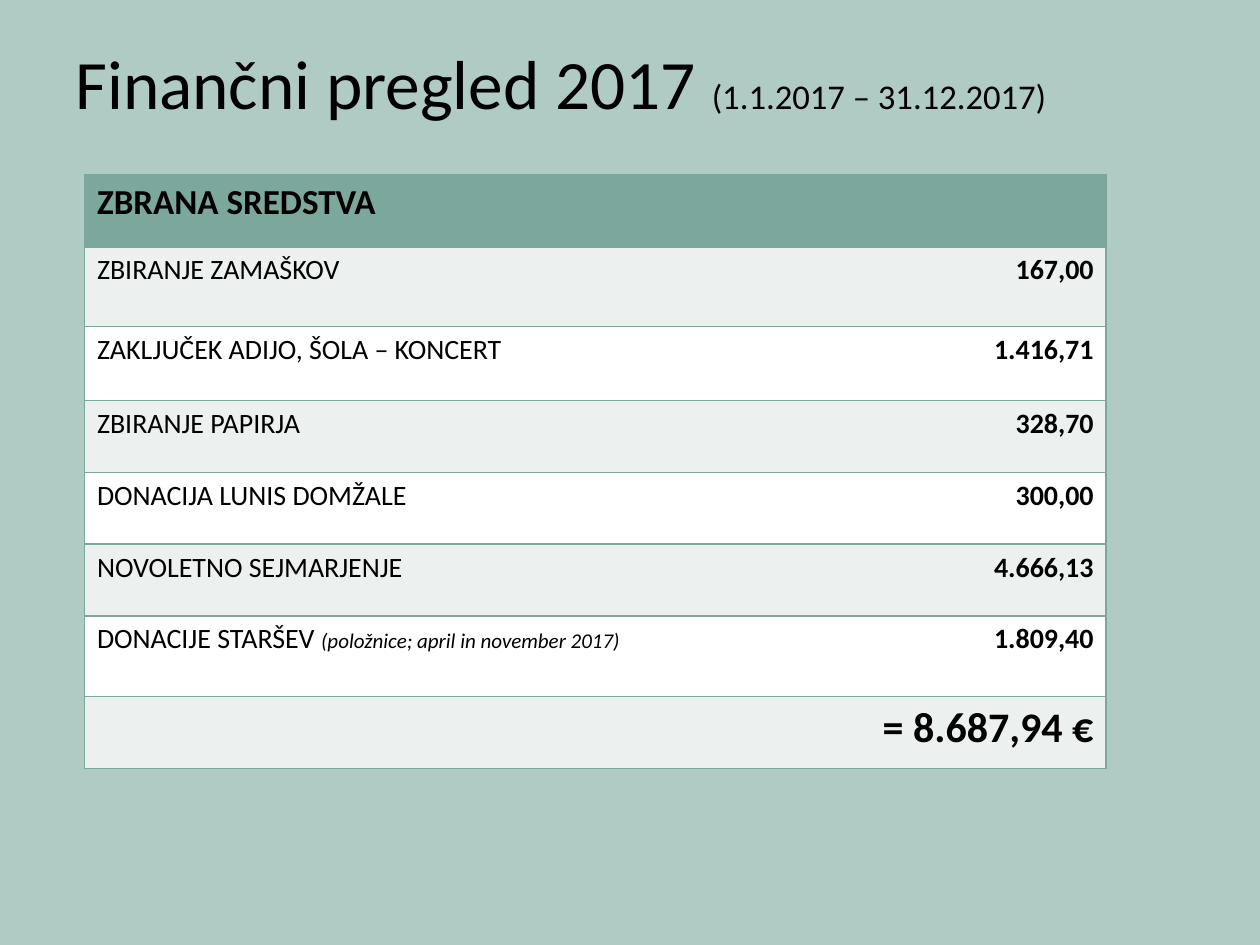
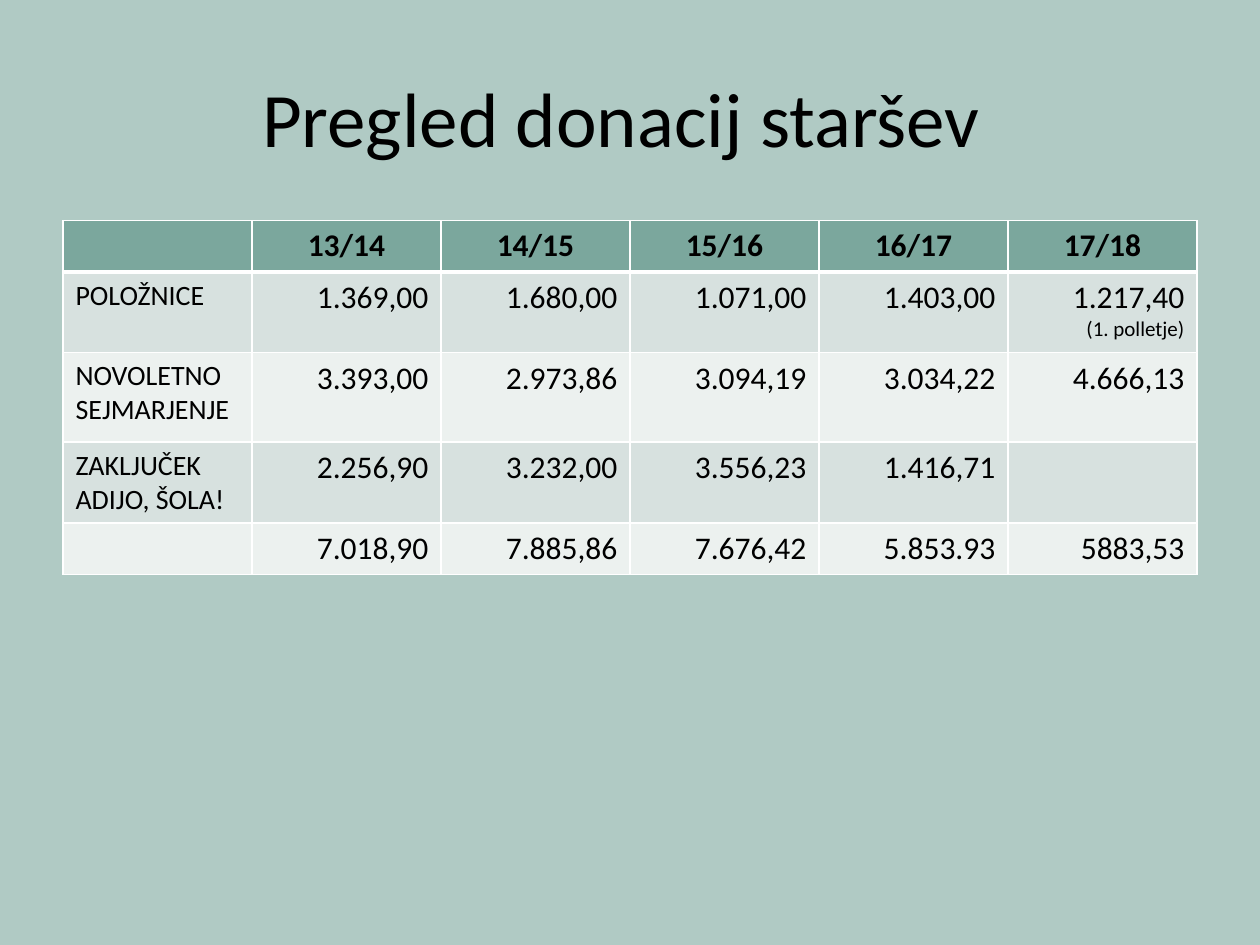
from dataclasses import dataclass

from lxml.etree import SubElement
from pptx import Presentation
from pptx.dml.color import RGBColor
from pptx.enum.text import MSO_ANCHOR, PP_ALIGN
from pptx.oxml.ns import qn
from pptx.util import Inches, Pt

BACKGROUND = RGBColor(0xB0, 0xCA, 0xC4)
HEADER = RGBColor(0x7B, 0xA7, 0x9D)
BAND_DARK = RGBColor(0xD7, 0xE1, 0xDF)
BAND_LIGHT = RGBColor(0xEC, 0xF1, 0xEF)
WHITE = RGBColor(0xFF, 0xFF, 0xFF)
BLACK = RGBColor(0, 0, 0)
FONT = "Calibri"


@dataclass
class Span:
    text: str
    size: float
    bold: bool = False
    italic: bool = False


class Slides:
    """Holds the deck, its shared style and the current page."""

    def __init__(self):
        self.deck = Presentation()
        self.deck.slide_width = Inches(10)
        self.deck.slide_height = Inches(7.5)
        self.page = None

    def new_page(self):
        self.page = self.deck.slides.add_slide(self.deck.slide_layouts[6])
        fill = self.page.background.fill
        fill.solid()
        fill.fore_color.rgb = BACKGROUND

    def fill_text(self, text_frame, lines, align):
        """Set lines, each a list of spans, one paragraph per line."""
        for index, spans in enumerate(lines):
            para = text_frame.paragraphs[0] if index == 0 else text_frame.add_paragraph()
            para.alignment = align
            for span in spans:
                run = para.add_run()
                run.text = span.text
                font = run.font
                font.name, font.size = FONT, Pt(span.size)
                font.bold, font.italic = span.bold, span.italic
                font.color.rgb = BLACK

    def title(self, spans, height, align=PP_ALIGN.LEFT):
        box = self.page.shapes.add_textbox(Inches(0.5), Inches(0.3), Inches(9), Inches(height))
        frame = box.text_frame
        frame.word_wrap = True
        frame.vertical_anchor = MSO_ANCHOR.MIDDLE
        self.fill_text(frame, [spans], align)

    def table(self, left, top, widths, heights):
        """Add an unstyled table; its cells are set one by one with cell()."""
        frame = self.page.shapes.add_table(
            len(heights), len(widths), Inches(left), Inches(top),
            Inches(sum(widths)), Inches(sum(heights)))
        table = frame.table
        table.first_row = table.horz_banding = False
        for column, width in zip(table.columns, widths):
            column.width = Inches(width)
        for row, height in zip(table.rows, heights):
            row.height = Inches(height)
        return table

    def cell(self, cell, lines, align, fill, border, edges):
        """Edges maps L, R, T and B to a border width in points; 0 hides the edge."""
        properties = cell._tc.get_or_add_tcPr()
        for side in "LRTB":
            line = SubElement(properties, qn(f"a:ln{side}"), w=str(Pt(edges[side])))
            if edges[side]:
                paint = SubElement(line, qn("a:solidFill"))
                SubElement(paint, qn("a:srgbClr"), val=str(border))
            else:
                SubElement(line, qn("a:noFill"))
        cell.fill.solid()
        cell.fill.fore_color.rgb = fill
        self.fill_text(cell.text_frame, lines, align)


def build_income(slides):
    slides.new_page()
    slides.title([Span("Finančni pregled 2017 ", 39.6),
                  Span("(1.1.2017 – 31.12.2017)", 19.8)], 0.69)
    incomes = [
        ("ZBIRANJE ZAMAŠKOV", "167,00"),
        ("ZAKLJUČEK ADIJO, ŠOLA – KONCERT", "1.416,71"),
        ("ZBIRANJE PAPIRJA", "328,70"),
        ("DONACIJA LUNIS DOMŽALE", "300,00"),
        ("NOVOLETNO SEJMARJENJE", "4.666,13"),
        ("DONACIJE STARŠEV ", "1.809,40"),
    ]
    rows = [([Span("ZBRANA SREDSTVA", 20, bold=True)], [])]
    rows += [([Span(name, 16)], [Span(amount, 16, bold=True)]) for name, amount in incomes]
    rows[-1][0].append(Span("(položnice; april in november 2017)", 12, italic=True))
    rows.append(([], [Span("= 8.687,94 €", 24, bold=True)]))

    table = slides.table(0.67, 1.39, [5.17, 2.94],
                         [0.57, 0.63, 0.59, 0.57, 0.57, 0.57, 0.64, 0.57])
    for r, (name, amount) in enumerate(rows):
        fill = HEADER if r == 0 else (WHITE, BAND_LIGHT)[r % 2]
        slides.cell(table.cell(r, 0), [name], PP_ALIGN.LEFT, fill, HEADER,
                    {"L": 1, "R": 0, "T": 1, "B": 1})
        slides.cell(table.cell(r, 1), [amount], PP_ALIGN.RIGHT, fill, HEADER,
                    {"L": 0, "R": 1, "T": 1, "B": 1})


def build_donations(slides):
    slides.new_page()
    slides.title([Span("Pregled donacij staršev ", 44)], 1.25, PP_ALIGN.CENTER)
    rows = [
        ["", "13/14", "14/15", "15/16", "16/17", "17/18"],
        ["POLOŽNICE", "1.369,00", "1.680,00", "1.071,00", "1.403,00", "1.217,40"],
        ["NOVOLETNO SEJMARJENJE", "3.393,00", "2.973,86", "3.094,19", "3.034,22", "4.666,13"],
        ["ZAKLJUČEK ADIJO, ŠOLA!", "2.256,90", "3.232,00", "3.556,23", "1.416,71", ""],
        ["", "7.018,90", "7.885,86", "7.676,42", "5.853.93", "5883,53"],
    ]
    notes = {"1.217,40": "(1. polletje)"}
    table = slides.table(0.5, 1.75, [1.5] * 6, [0.41, 0.64, 0.71, 0.64, 0.41])
    for r, row in enumerate(rows):
        fill = HEADER if r == 0 else (BAND_LIGHT, BAND_DARK)[r % 2]
        edges = {"L": 1, "R": 1, "T": 3 if r == 1 else 1, "B": 3 if r == 0 else 1}
        for c, text in enumerate(row):
            if r == 0:
                align = PP_ALIGN.CENTER
            else:
                align = PP_ALIGN.RIGHT if c else PP_ALIGN.LEFT
            lines = [[Span(text, 18 if c else 16, bold=r == 0)]] if text else []
            if text in notes:
                lines.append([Span(notes[text], 12)])
            slides.cell(table.cell(r, c), lines, align, fill, WHITE, edges)


def main():
    slides = Slides()
    build_income(slides)
    build_donations(slides)
    slides.deck.save("out.pptx")


if __name__ == "__main__":
    main()
